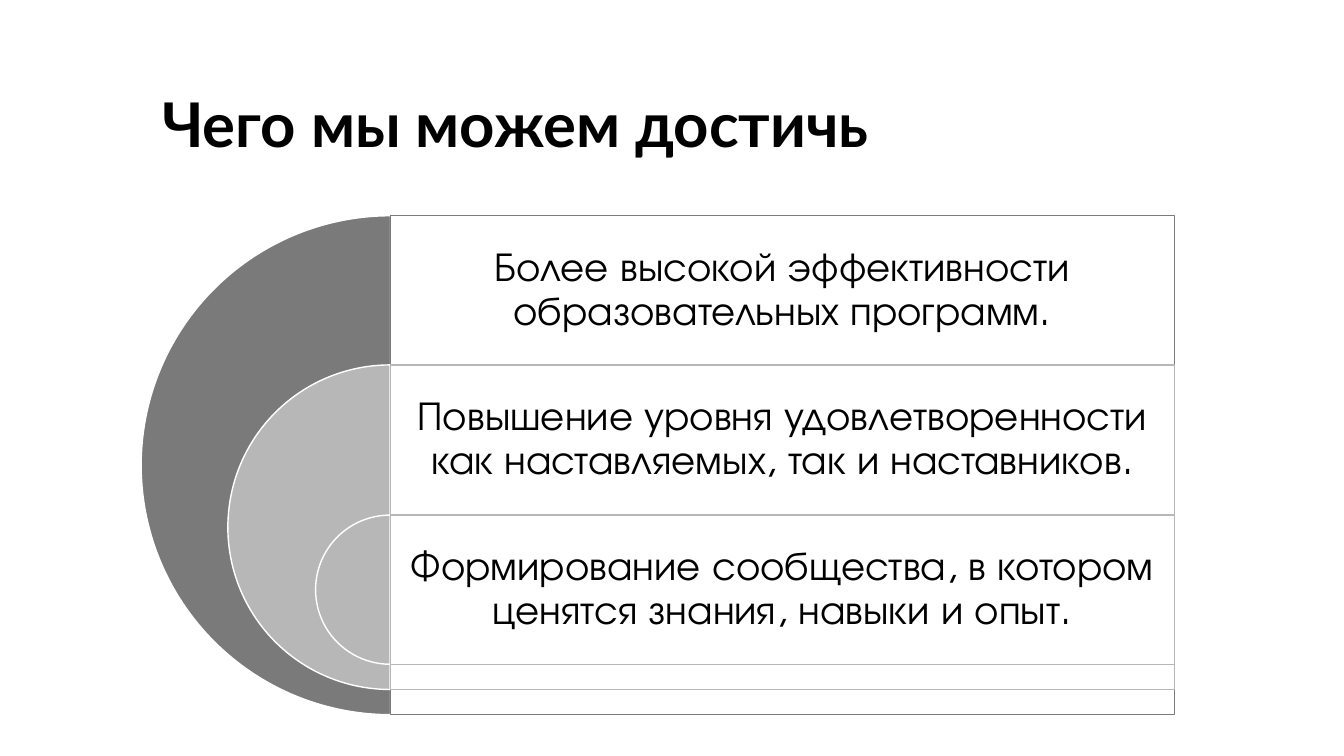
import pptx
import pptx.dml.color
import pptx.enum.shapes
import pptx.enum.text
import pptx.oxml
import pptx.oxml.ns
import pptx.util

PX = 9144  # EMU, 100 px to the inch
COLORS = {"ink": "000000", "paper": "FFFFFF", "dark": "7A7A7A", "light": "B7B7B7"}
SHAPES = pptx.enum.shapes.MSO_SHAPE
ANCHOR = pptx.enum.text.MSO_ANCHOR
ALIGN = pptx.enum.text.PP_ALIGN


class Deck:
    def __init__(self, wide, high):
        self.show = pptx.Presentation()
        self.show.slide_width, self.show.slide_height = wide * PX, high * PX
        self.slide = self.show.slides.add_slide(self.show.slide_layouts[6])

    def color(self, name):
        return pptx.dml.color.RGBColor.from_string(COLORS[name])

    def shape(self, kind, box, fill, line):
        item = self.slide.shapes.add_shape(kind, *[n * PX for n in box])
        item.shadow.inherit = False
        item.fill.solid()
        item.fill.fore_color.rgb = self.color(fill)
        item.line.color.rgb = self.color(line)
        item.line.width = pptx.util.Pt(1)
        return item

    def half(self, box, fill):
        """Draw the left half of a disc."""
        pie = self.shape(SHAPES.PIE, box, fill, "paper")
        pie.adjustments[0], pie.adjustments[1] = 54, 162

    def panel(self, box, line):
        """Draw a white frame that lets a tenth of what lies behind through."""
        rect = self.shape(SHAPES.RECTANGLE, box, "paper", line)
        tint = rect._element.spPr.find(".//" + pptx.oxml.ns.qn("a:srgbClr"))
        tint.append(pptx.oxml.parse_xml(
            f'<a:alpha {pptx.oxml.ns.nsdecls("a")} val="90000"/>'))

    def text(self, box, words, face, size, bold=False, align=ALIGN.LEFT,
             anchor=ANCHOR.TOP, inset=(10, 5)):
        frame = self.slide.shapes.add_textbox(*[n * PX for n in box]).text_frame
        frame.word_wrap = True
        frame.vertical_anchor = anchor
        frame.margin_left = frame.margin_right = inset[0] * PX
        frame.margin_top = frame.margin_bottom = inset[1] * PX
        para = frame.paragraphs[0]
        para.alignment, para.line_spacing = align, 0.9
        run = para.add_run()
        run.text = words
        run.font.name, run.font.size = face, pptx.util.Pt(size)
        run.font.bold = bold
        run.font.color.rgb = self.color("ink")


def main():
    deck = Deck(1333, 750)
    deck.text((151, 89, 854, 125), "Чего мы можем достичь", "Lato", 44, bold=True)

    goals = [
        ("Более высокой эффективности образовательных программ.", "dark"),
        ("Повышение уровня удовлетворенности как наставляемых, так и наставников.",
         "light"),
        ("Формирование сообщества, в котором ценятся знания, навыки и опыт.", "light"),
    ]
    axis, wide, row = 387, 778, 148
    for i, (words, tone) in enumerate(goals):
        top = round(214 + 148.5 * i)
        size = round(495 - 173.5 * i)
        deck.half((axis - size // 2, top, size, size), tone)
        deck.panel((axis, top, wide, size), tone)
        deck.text((axis, top, wide, row), words, "TeX Gyre Adventor", 29,
                  align=ALIGN.CENTER, anchor=ANCHOR.MIDDLE, inset=(12, 12))
    deck.show.save("out.pptx")


if __name__ == "__main__":
    main()
